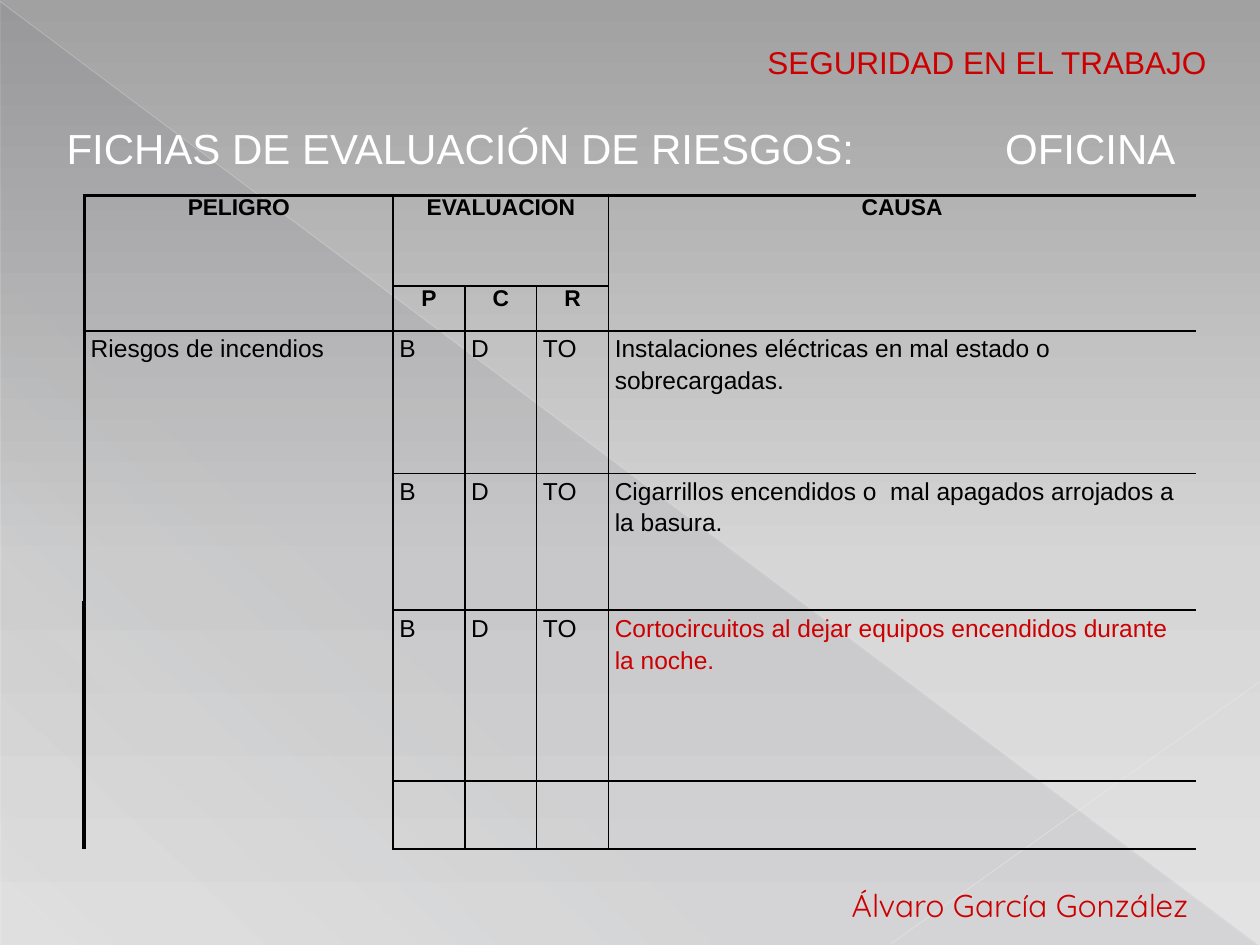
from lxml.etree import SubElement
from pptx import Presentation
from pptx.dml.color import RGBColor
from pptx.enum.shapes import MSO_CONNECTOR, MSO_SHAPE
from pptx.enum.text import MSO_AUTO_SIZE, PP_ALIGN
from pptx.oxml import parse_xml
from pptx.oxml.ns import nsdecls, qn
from pptx.util import Inches, Pt

BLACK = RGBColor(0x00, 0x00, 0x00)
WHITE = RGBColor(0xFF, 0xFF, 0xFF)
RED = RGBColor(0xCC, 0x00, 0x00)
SLATE = RGBColor(0x42, 0x44, 0x56)
PALE = RGBColor(0xEE, 0xEE, 0xEE)
GRAY_TOP = RGBColor(0xA1, 0xA1, 0xA1)
GRAY_MID = RGBColor(0xD6, 0xD6, 0xD6)
GRAY_END = RGBColor(0xE3, 0xE3, 0xE3)
NO_STYLE = "{2D5ABB26-0587-4C30-8999-92F81FD0307C}"


def set_gradient(fill, owner, stops, angle):
    fill.gradient()
    grad = owner.find(".//" + qn("a:gradFill"))
    gs_list = grad.find(qn("a:gsLst"))
    for gs in list(gs_list):
        gs_list.remove(gs)
    for pos, color, alpha in stops:
        gs = SubElement(gs_list, qn("a:gs"), pos=str(pos * 1000))
        clr = SubElement(gs, qn("a:srgbClr"), val=str(color))
        SubElement(clr, qn("a:alpha"), val=str(alpha * 1000))
    grad.find(qn("a:lin")).set("ang", str(angle * 60000))


def add_line(x1, y1, x2, y2, color, width, alpha=100):
    ln = s.shapes.add_connector(MSO_CONNECTOR.STRAIGHT, Inches(x1), Inches(y1), Inches(x2), Inches(y2))
    ln.line.color.rgb = color
    ln.line.width = Pt(width)
    clr = ln._element.find(".//" + qn("a:srgbClr"))
    SubElement(clr, qn("a:alpha"), val=str(alpha * 1000))
    SubElement(ln._element.spPr, qn("a:effectLst"))


prs = Presentation()
prs.slide_width, prs.slide_height = Inches(10), Inches(7.5)
s = prs.slides.add_slide(prs.slide_layouts[6])

set_gradient(s.background.fill, s._element,
             [(0, GRAY_TOP, 100), (60, GRAY_MID, 100), (100, GRAY_END, 100)], 90)

tri = s.shapes.add_shape(MSO_SHAPE.RIGHT_TRIANGLE, Inches(0.01), Inches(0.02), Inches(9.98), Inches(7.48))
tri.shadow.inherit = False
tri.line.fill.background()
set_gradient(tri.fill, tri._element.spPr, [(0, SLATE, 10), (70, SLATE, 8), (100, SLATE, 1)], 133)
add_line(0, 0.01, 9.99, 7.49, PALE, 0.39, 35)
add_line(10, 5.41, 7.07, 7.49, PALE, 0.47, 45)

texts = [
    ("SEGURIDAD EN EL TRABAJO", 5.79, 0.29, 3.94, 0.4, 0.3, "Arial", 18, RED),
    ("Álvaro García González", 6.26, 6.98, 3.54, 0.4, 0.5, "Quicksand", 18, RED),
    ("FICHAS DE EVALUACIÓN DE RIESGOS:\tOFICINA", 0.43, 0.92, 9.06, 0.5, 0.1, "Arial", 24, WHITE),
]
for text, x, y, w, h, inset, font, size, color in texts:
    tf = s.shapes.add_textbox(Inches(x), Inches(y), Inches(w), Inches(h)).text_frame
    tf.word_wrap = True
    tf.auto_size = MSO_AUTO_SIZE.SHAPE_TO_FIT_TEXT
    tf.margin_left = Inches(inset)
    p = tf.paragraphs[0]
    p.text = text
    p.font.name, p.font.size = font, Pt(size)
    p.font.color.rgb = color
    if "\t" in text:
        tabs = parse_xml(f'<a:tabLst {nsdecls("a")}><a:tab pos="{Inches(7.45)}" algn="l"/></a:tabLst>')
        p._p.get_or_add_pPr().insert(0, tabs)

LEFT, WIDTH = 0.67, 8.82
COLS = [2.45, 0.57, 0.57, 0.57, 4.66]
upper_rows = [
    ["PELIGRO", "EVALUACION", "", "", "CAUSA"],
    ["", "P", "C", "R", ""],
    ["Riesgos de incendios", "B", "D", "TO", "Instalaciones eléctricas en mal estado o sobrecargadas."],
    ["", "B", "D", "TO", "Cigarrillos encendidos o  mal apagados arrojados a la basura."],
]
lower_rows = [
    ["", "B", "D", "TO", "Cortocircuitos al dejar equipos encendidos durante la noche."],
    [""] * 5,
]
ALL, EVAL, RIGHT = range(5), range(1, 4), range(1, 5)
tables = [
    (1.55, [0.72, 0.36, 1.13, 1.08], upper_rows, 2,
     [(2.25, ALL), (1, EVAL), (1.5, ALL), (1, RIGHT), (1.5, RIGHT)], [(0, 1, 0, 3), (2, 0, 3, 0)]),
    (4.85, [1.35, 0.54], lower_rows, 0, [(0, ALL), (1, RIGHT), (1, RIGHT)], []),
]
for top, heights, rows, header_rows, rules, merges in tables:
    tbl = s.shapes.add_table(len(rows), len(COLS), Inches(LEFT), Inches(top),
                             Inches(WIDTH), Inches(sum(heights))).table
    tbl.first_row = tbl.horz_banding = False
    tbl._tbl.tblPr.find(qn("a:tableStyleId")).text = NO_STYLE
    for col, w in zip(tbl.columns, COLS):
        col.width = Inches(w)
    for row, h in zip(tbl.rows, heights):
        row.height = Inches(h)
    for r1, c1, r2, c2 in merges:
        tbl.cell(r1, c1).merge(tbl.cell(r2, c2))
    for i, row in enumerate(rows):
        for j, text in enumerate(row):
            cell = tbl.cell(i, j)
            cell.fill.background()
            cell.margin_left = cell.margin_right = Inches(0.05)
            cell.margin_top = cell.margin_bottom = 0
            p = cell.text_frame.paragraphs[0]
            p.text = text
            header = i < header_rows
            p.font.name, p.font.size, p.font.bold = "Arial", Pt(13 if header else 14), header
            p.font.color.rgb = RED if text.startswith("Corto") else BLACK
            if header:
                p.alignment = PP_ALIGN.CENTER
            else:
                p.line_spacing, p.space_after = 1.15, Pt(10)
            edges = [("lnL", 1 if j else 2.25), ("lnR", 1 if j < 4 else 0)]
            for tag, (width, span) in zip(("lnT", "lnB"), rules[i:i + 2]):
                edges.append((tag, width if j in span else 0))
            for k, (tag, width) in enumerate(edges):
                paint = f'<a:solidFill><a:srgbClr val="{BLACK}"/></a:solidFill>' if width else "<a:noFill/>"
                ln = parse_xml(f'<a:{tag} {nsdecls("a")} w="{Pt(width)}">{paint}</a:{tag}>')
                cell._tc.get_or_add_tcPr().insert(k, ln)

add_line(LEFT, 4.77, LEFT, 6.74, BLACK, 2.25)

prs.save("out.pptx")
